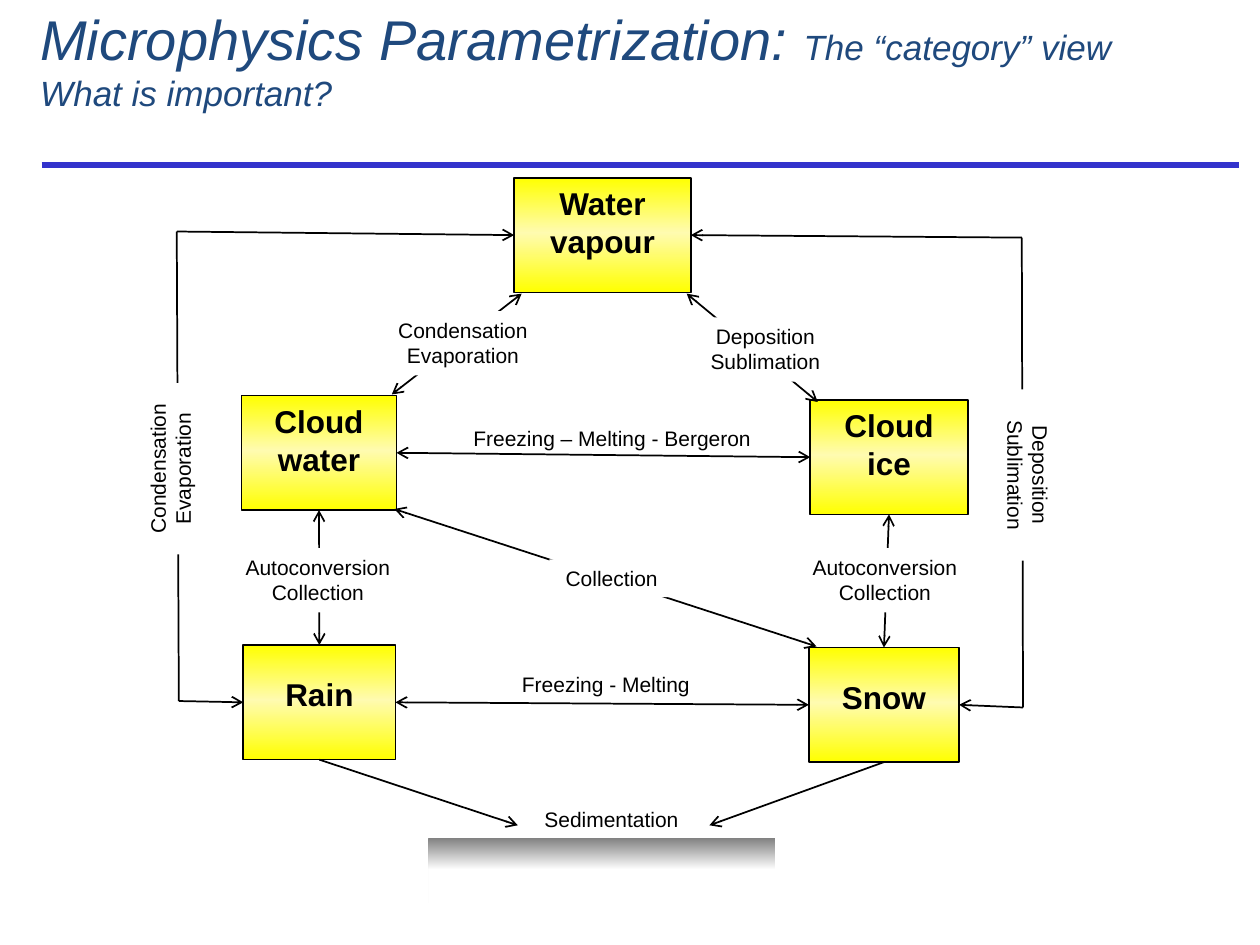
"""Build the slide on cloud microphysics categories and the processes between them."""
from copy import deepcopy

from pptx import Presentation
from pptx.dml.color import RGBColor
from pptx.enum.shapes import MSO_CONNECTOR, MSO_SHAPE
from pptx.enum.text import MSO_ANCHOR, MSO_AUTO_SIZE, PP_ALIGN
from pptx.oxml.ns import qn
from pptx.util import Pt
from lxml import etree

RECTANGLE = MSO_SHAPE.RECTANGLE
STRAIGHT = MSO_CONNECTOR.STRAIGHT
LEFT_ALIGN, CENTER = PP_ALIGN.LEFT, PP_ALIGN.CENTER
TOP_ANCHOR, MIDDLE_ANCHOR = MSO_ANCHOR.TOP, MSO_ANCHOR.MIDDLE
NO_AUTOFIT = MSO_AUTO_SIZE.NONE
TOP, LEFT, BOTTOM, RIGHT = range(4)

BLACK = RGBColor(0x00, 0x00, 0x00)
WHITE = RGBColor(0xFF, 0xFF, 0xFF)
GRAY = RGBColor(0x80, 0x80, 0x80)
NAVY = RGBColor(0x1F, 0x49, 0x7D)
BLUE = RGBColor(0x33, 0x33, 0xCC)
YELLOW = RGBColor(0xFF, 0xFF, 0x00)
CREAM = RGBColor(0xFF, 0xFB, 0xB0)

BOX_STOPS = [(0, YELLOW), (0.48, CREAM), (1, YELLOW)]
GROUND_STOPS = [(0, GRAY), (0.49, WHITE)]
BOX_HEIGHT = 65.5
LINE_HEIGHT, PAIR_HEIGHT = 21.6, 36.7


def add_span(para, text, size=12, color=BLACK, bold=False, italic=False):
    """Append formatted text to a paragraph."""
    span = para.add_run()
    span.text = text
    span.font.name = "Arial"
    span.font.size = Pt(size)
    span.font.color.rgb = color
    span.font.bold = bold
    span.font.italic = italic


class Diagram:
    """Hold the current page and draw each kind of element on it."""

    def __init__(self, page):
        self.page = page

    def title(self, left, top, width, height, lines):
        """Fill the title with lines of (text, size) spans."""
        box = self.page.shapes.title
        box.left, box.top, box.width, box.height = map(Pt, (left, top, width, height))
        frame = box.text_frame
        frame.auto_size = NO_AUTOFIT
        frame.vertical_anchor = MIDDLE_ANCHOR
        para = frame.paragraphs[0]
        para.alignment = LEFT_ALIGN
        for number, spans in enumerate(lines):
            if number:
                para.add_line_break()
            for text, size in spans:
                add_span(para, text, size=size, color=NAVY, italic=True)

    def gradient(self, left, top, width, height, stops):
        """Draw a rectangle with a vertical gradient."""
        box = self.page.shapes.add_shape(RECTANGLE, *map(Pt, (left, top, width, height)))
        box.shadow.inherit = False
        box.line.fill.background()
        box.fill.gradient()
        box.fill.gradient_angle = 270
        stop_list = box.element.spPr.find(".//" + qn("a:gsLst"))
        for _ in stops[2:]:
            stop_list.append(deepcopy(stop_list[0]))
        for stop, (position, color) in zip(box.fill.gradient_stops, stops):
            stop.position = position
            stop.color.rgb = color
        return box

    def category(self, text, left, top, width, inset=3.6):
        """Draw a yellow box that names a water category."""
        box = self.gradient(left, top, width, BOX_HEIGHT, BOX_STOPS)
        box.line.color.rgb = BLACK
        box.line.width = Pt(1)
        frame = box.text_frame
        frame.word_wrap = True
        frame.vertical_anchor = TOP_ANCHOR
        frame.margin_top = Pt(inset)
        para = frame.paragraphs[0]
        para.alignment = CENTER
        add_span(para, text, size=18, bold=True)
        return box

    def label(self, text, left, top, width, height, masked=True, turn=None):
        """Write a process name, over a white mask where it covers a line."""
        box = self.page.shapes.add_textbox(*map(Pt, (left, top, width, height)))
        if masked:
            box.fill.solid()
            box.fill.fore_color.rgb = WHITE
        frame = box.text_frame
        frame.word_wrap = True
        if turn:
            frame._txBody.bodyPr.set("vert", turn)
        para = frame.paragraphs[0]
        para.alignment = CENTER
        add_span(para, text)

    def line(self, start, end, ends=(), color=BLACK, width=1):
        """Draw a line between points or (box, side) joints, with arrows at the named ends."""
        joined = [not isinstance(place[0], (int, float)) for place in (start, end)]
        points = [(0, 0) if joint else place for joint, place in zip(joined, (start, end))]
        link = self.page.shapes.add_connector(STRAIGHT, *map(Pt, points[0] + points[1]))
        if joined[0]:
            link.begin_connect(*start)
        if joined[1]:
            link.end_connect(*end)
        link.line.color.rgb = color
        link.line.width = Pt(width)
        outline = link.line._get_or_add_ln()
        for name in ends:
            etree.SubElement(outline, qn(f"a:{name}"), type="arrow")
        etree.SubElement(link.element.spPr, qn("a:effectLst"))


def main():
    """Draw the slide and save it."""
    deck = Presentation()
    deck.slide_width, deck.slide_height = Pt(720), Pt(540)
    page = deck.slides.add_slide(deck.slide_layouts[5])
    diagram = Diagram(page)
    forward, both = ("tailEnd",), ("headEnd", "tailEnd")

    diagram.line((23.8, 94.3), (708, 94.3), color=BLUE, width=3)
    diagram.title(15.8, 11.5, 686.2, 44.6, [
        [("Microphysics Parametrization: ", 32), ("The “category” view", 20)],
        [("What is important?", 20)],
    ])

    ice = diagram.category("Cloud ice", 463, 228.5, 90)
    snow = diagram.category("Snow", 462.2, 370, 85.9, inset=17.4)
    water = diagram.category("Cloud water", 138, 226, 88.6)
    rain = diagram.category("Rain", 139, 368.6, 87, inset=17.4)
    vapour = diagram.category("Water vapour", 293.8, 101.6, 101)

    for start, end in [
        ((223.9, 225.4), (298.1, 167.8)),
        ((392.4, 167.8), (467.3, 229.7)),
        ((225.4, 290.9), (466.6, 369.4)),
        ((ice, BOTTOM), (snow, TOP)),
        ((water, BOTTOM), (rain, TOP)),
        ((rain, RIGHT), (snow, LEFT)),
        ((water, RIGHT), (ice, LEFT)),
    ]:
        diagram.line(start, end, both)

    for upper, lower, vapour_side, box, box_side in [
        ((101, 132.3), (102.2, 400.6), LEFT, rain, LEFT),
        ((583.9, 135.8), (584.6, 404.3), RIGHT, snow, RIGHT),
    ]:
        diagram.line(upper, (vapour, vapour_side), forward)
        diagram.line(upper, lower)
        diagram.line(lower, (box, box_side), forward)

    diagram.line((rain, BOTTOM), (295.9, 471.6), forward)
    diagram.line((snow, BOTTOM), (405.4, 471.6), forward)

    for text, left, top in [
        ("Autoconversion Collection", 442, 313.2),
        ("Autoconversion Collection", 118, 313.2),
        ("Deposition Sublimation", 373.7, 181.4),
        ("Condensation Evaporation", 200.9, 177.8),
    ]:
        diagram.label(text, left, top, 127.4, PAIR_HEIGHT)

    for text, left, top in [
        ("Freezing - Melting", 245.5, 380.2),
        ("Freezing – Melting - Bergeron", 249.1, 239.4),
    ]:
        diagram.label(text, left, top, 201.6, LINE_HEIGHT, masked=False)

    diagram.label("Collection", 313.9, 319.7, 71.3, LINE_HEIGHT)
    diagram.label("Condensation Evaporation", 79.2, 218.9, 43.9, 97.9, turn="vert270")
    diagram.label("Deposition Sublimation", 561.6, 222.5, 43.9, 97.9, turn="vert")

    diagram.gradient(244.8, 478.8, 198, 37.4, GROUND_STOPS)
    diagram.label("Sedimentation", 303.8, 457.2, 91.4, LINE_HEIGHT)

    deck.save("out.pptx")


if __name__ == "__main__":
    main()
